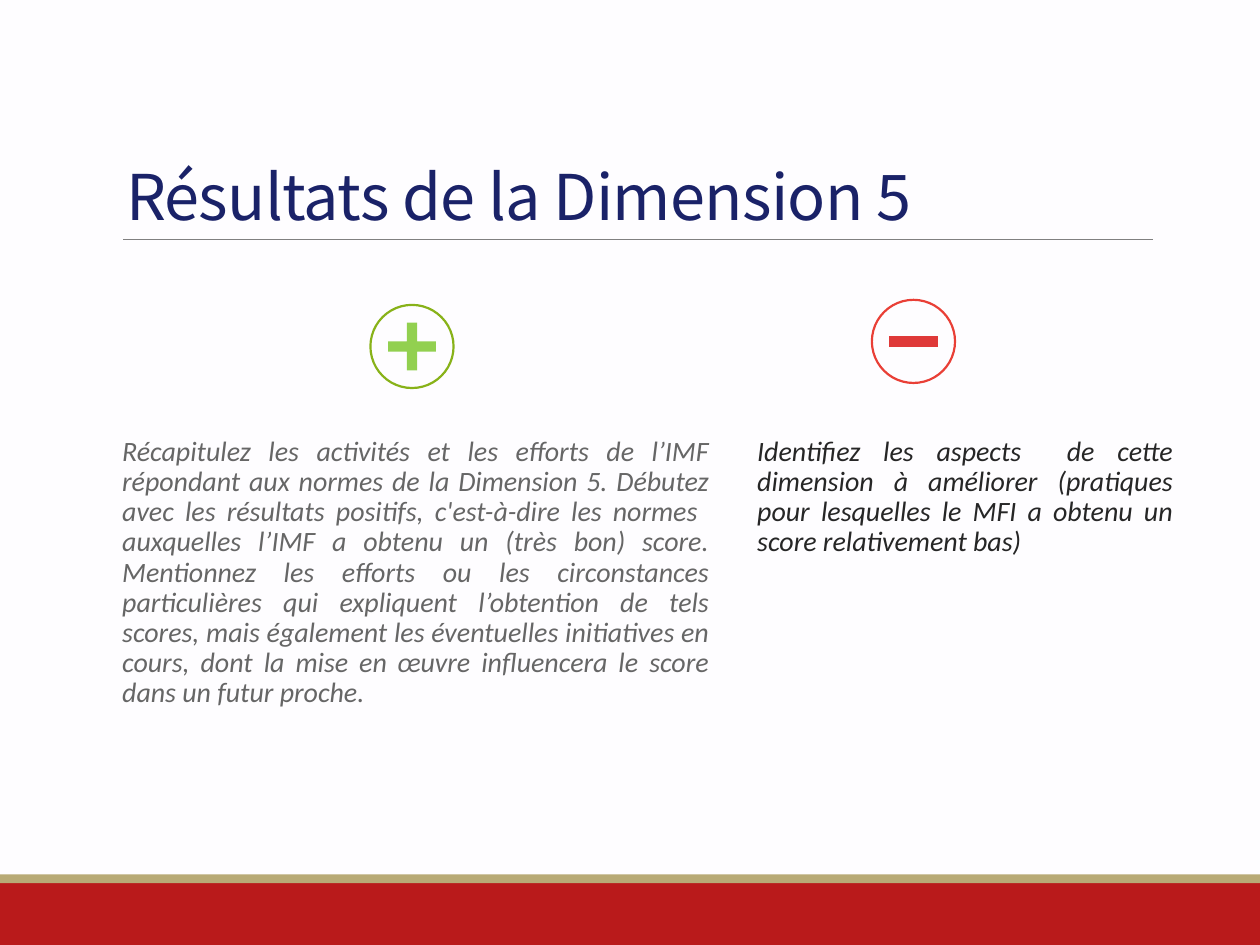
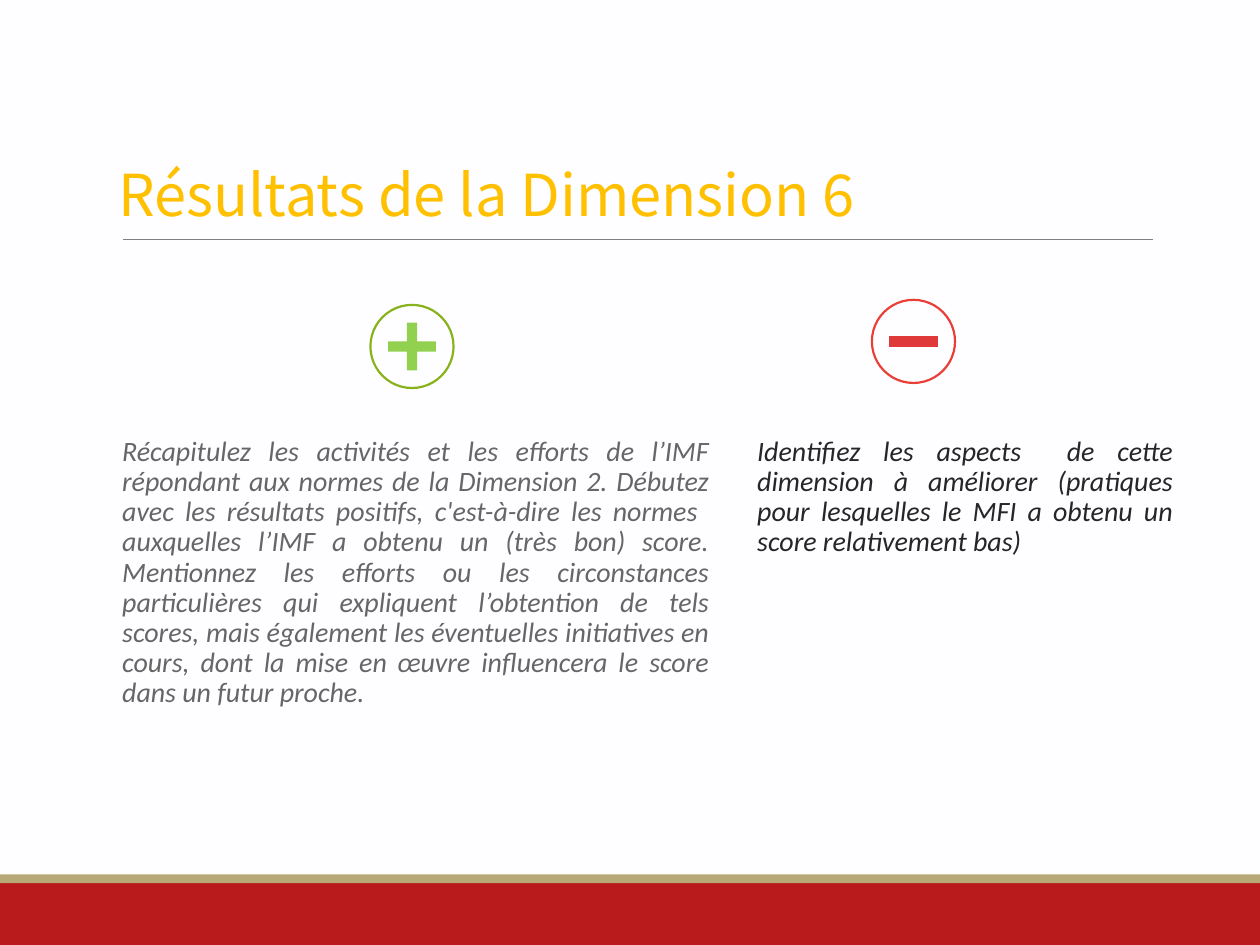
import pptx
import pptx.util
import pptx.dml.color
import pptx.enum.shapes
import pptx.enum.text
import pptx.oxml.ns
import lxml.etree

Inches = pptx.util.Inches
Pt = pptx.util.Pt
SHAPE = pptx.enum.shapes.MSO_SHAPE
ANCHOR = pptx.enum.text.MSO_ANCHOR
ALIGN = pptx.enum.text.PP_ALIGN

COLORS = {
    "background": "FEFDFF",
    "band": "B91A1B",
    "stripe": "B8AA76",
    "rule": "808080",
    "navy": "1A2268",
    "amber": "FFC000",
    "strength_text": "666666",
    "weakness_text": "262626",
    "plus": "92D050",
    "plus_ring": "88B219",
    "minus": "DF3939",
    "minus_ring": "E93F36",
}

STRENGTHS = (
    "Récapitulez les activités et les efforts de l’IMF répondant aux normes de la "
    "Dimension {}. Débutez avec les résultats positifs, c'est-à-dire les normes  "
    "auxquelles l’IMF a obtenu un (très bon) score. Mentionnez les efforts ou les "
    "circonstances particulières qui expliquent l’obtention de tels scores, mais "
    "également les éventuelles initiatives en cours, dont la mise en œuvre "
    "influencera le score dans un futur proche."
)
WEAKNESSES = (
    "Identifiez les aspects  de cette dimension à améliorer (pratiques pour "
    "lesquelles le MFI a obtenu un score relativement bas)"
)

SLIDES = [
    {"title": "Résultats de la Dimension 5", "norms": 5, "box": (0.9, 0.31, 8.25, 1.59),
     "size": 36, "color": "navy", "line_spacing": 0.85, "tracking": -40},
    {"title": "Résultats de la Dimension 6", "norms": 2, "box": (0.84, 1.03, 9.1, 0.83),
     "size": 33, "color": "amber", "line_spacing": 1.0, "tracking": 0},
]

COLUMNS = [
    {"text": STRENGTHS, "color": "strength_text", "left": 0.9, "width": 4.73},
    {"text": WEAKNESSES, "color": "weakness_text", "left": 5.94, "width": 3.37},
]
COLUMN_TOP, COLUMN_HEIGHT = 3.42, 3.55

BANDS = [("band", (0, 7, 10, 0.5)), ("stripe", (0, 6.94, 10, 0.07))]

RING_DIAMETER = 0.66
BADGES = [
    {"sign": SHAPE.FLOWCHART_PROCESS, "center": (7.25, 2.71), "sign_size": (0.39, 0.08),
     "color": "minus", "ring": "minus_ring", "adjustment": None},
    {"sign": SHAPE.CROSS, "center": (3.27, 2.75), "sign_size": (0.38, 0.38),
     "color": "plus", "ring": "plus_ring", "adjustment": 0.393},
]


def rgb(name):
    return pptx.dml.color.RGBColor.from_string(COLORS[name])


def apply(target, values):
    for name, value in values.items():
        setattr(target, name, value)


def inches(box):
    return [Inches(value) for value in box]


def centered(center, size):
    return [middle - length / 2 for middle, length in zip(center, size)] + list(size)


def add_shape(shapes, kind, box, fill=None, line=None):
    shape = shapes.add_shape(kind, *inches(box))
    shape.shadow.inherit = False
    if fill:
        shape.fill.solid()
        shape.fill.fore_color.rgb = rgb(fill)
    else:
        shape.fill.background()
    if line:
        shape.line.color.rgb = rgb(line)
        shape.line.width = Pt(1.25)
    else:
        shape.line.fill.background()
    return shape


def write_text(shape, text, frame_format, paragraph_format, font_format, color):
    frame = shape.text_frame
    frame.text = text
    apply(frame, {"word_wrap": True, "auto_size": pptx.enum.text.MSO_AUTO_SIZE.NONE,
                  **frame_format})
    paragraph = frame.paragraphs[0]
    apply(paragraph, paragraph_format)
    run = paragraph.runs[0]
    apply(run.font, font_format)
    run.font.color.rgb = rgb(color)
    return run


def add_frame(slide):
    for color, box in BANDS:
        add_shape(slide.shapes, SHAPE.RECTANGLE, box, fill=color)
    rule = slide.shapes.add_connector(
        pptx.enum.shapes.MSO_CONNECTOR.STRAIGHT, *inches((0.98, 1.9, 9.15, 1.9)))
    rule.line.color.rgb = rgb("rule")
    rule.line.width = Pt(0.5)
    lxml.etree.SubElement(rule._element.spPr, pptx.oxml.ns.qn("a:effectLst"))


def add_title(slide, content):
    title = slide.shapes.title
    apply(title, dict(zip(("left", "top", "width", "height"), inches(content["box"]))))
    run = write_text(
        title, content["title"], {"vertical_anchor": ANCHOR.BOTTOM},
        {"alignment": ALIGN.LEFT, "line_spacing": content["line_spacing"]},
        {"name": "Noto Sans CJK KR", "size": Pt(content["size"])}, content["color"])
    if content["tracking"]:
        run.font._element.set("spc", str(content["tracking"]))


def add_column(slide, column, norms):
    box = (column["left"], COLUMN_TOP, column["width"], COLUMN_HEIGHT)
    write_text(
        slide.shapes.add_textbox(*inches(box)), column["text"].format(norms),
        {"margin_left": Inches(0.07), "margin_right": 0, "vertical_anchor": ANCHOR.TOP},
        {"alignment": ALIGN.JUSTIFY, "line_spacing": 0.9},
        {"name": "Calibri", "size": Pt(16), "italic": True}, column["color"])


def add_badge(slide, badge):
    shapes = slide.shapes.add_group_shape().shapes
    sign = add_shape(shapes, badge["sign"],
                     centered(badge["center"], badge["sign_size"]), fill=badge["color"])
    if badge["adjustment"]:
        sign.adjustments[0] = badge["adjustment"]
    add_shape(shapes, SHAPE.OVAL,
              centered(badge["center"], (RING_DIAMETER, RING_DIAMETER)), line=badge["ring"])


def main():
    presentation = pptx.Presentation()
    apply(presentation, {"slide_width": Inches(10), "slide_height": Inches(7.5)})
    background = presentation.slide_master.background.fill
    background.solid()
    background.fore_color.rgb = rgb("background")
    for content in SLIDES:
        slide = presentation.slides.add_slide(presentation.slide_layouts[5])
        add_frame(slide)
        add_title(slide, content)
        for column in COLUMNS:
            add_column(slide, column, content["norms"])
        for badge in BADGES:
            add_badge(slide, badge)
    presentation.save("out.pptx")


if __name__ == "__main__":
    main()
